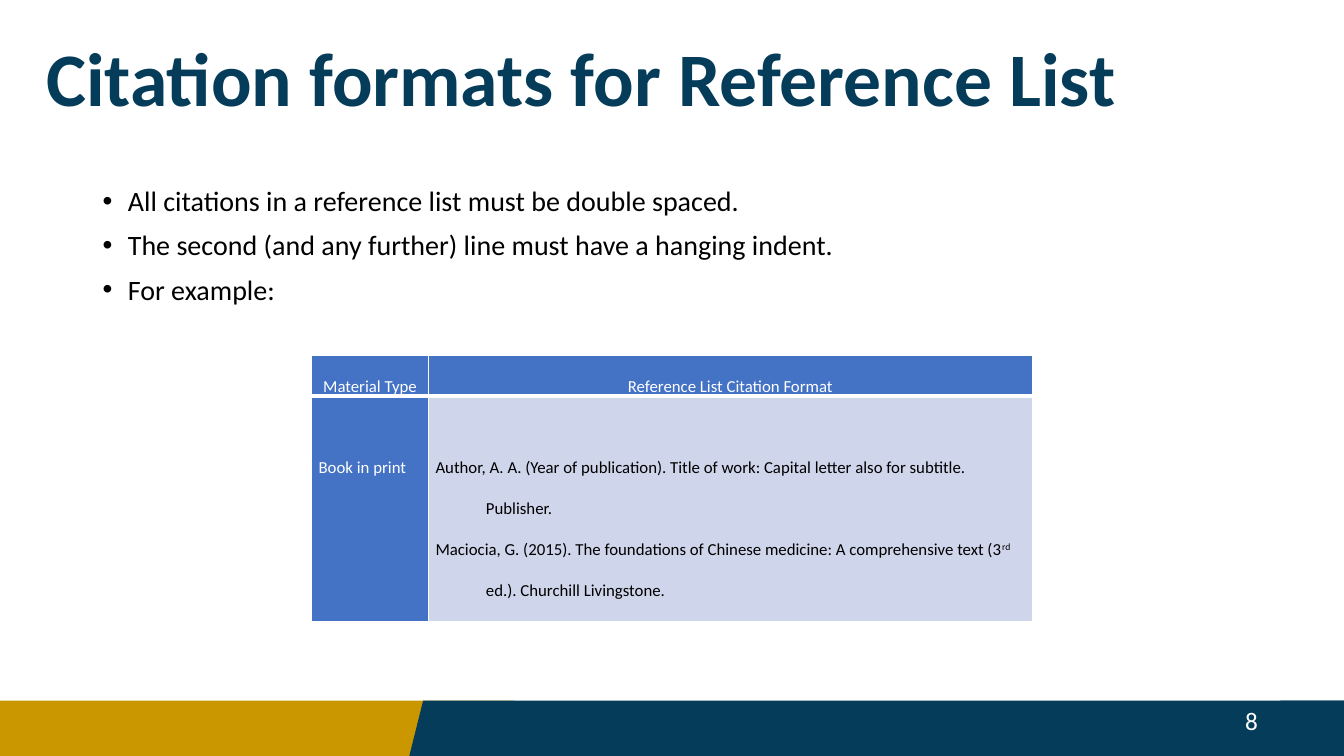
from lxml.etree import SubElement
from pptx import Presentation
from pptx.dml.color import RGBColor
from pptx.enum.shapes import MSO_SHAPE
from pptx.enum.text import MSO_ANCHOR, PP_ALIGN
from pptx.oxml.ns import qn
from pptx.util import Inches, Pt

NAVY = RGBColor(0x04, 0x3C, 0x59)
GOLD = RGBColor(0xCB, 0x97, 0x00)
BLUE = RGBColor(0x44, 0x72, 0xC4)
PALE = RGBColor(0xCF, 0xD5, 0xEA)
WHITE = RGBColor(0xFF, 0xFF, 0xFF)
BLACK = RGBColor(0x00, 0x00, 0x00)

BULLETS = [
    "All citations in a reference list must be double spaced.",
    "The second (and any further) line must have a hanging indent.",
    "For example:",
]
HEADINGS = ["Material Type", "Reference List Citation Format"]
MATERIAL = ["Book in print"]
CITATIONS = [
    "Author, A. A. (Year of publication). Title of work: Capital letter also for subtitle. Publisher.",
    ["Maciocia, G. (2015). The foundations of Chinese medicine: A comprehensive text (3",
     ("rd", "30000"), " ed.). Churchill Livingstone."],
]


def write(frame, paragraphs, size=12, color=BLACK, bold=False, align=PP_ALIGN.LEFT,
          spacing=1.0, before=0, hanging=0, bullet=None):
    """Fill a text frame with paragraphs; a (text, baseline) pair is a raised span."""
    for index, content in enumerate(paragraphs):
        para = frame.add_paragraph() if index else frame.paragraphs[0]
        para.alignment = align
        para.line_spacing = spacing
        para.space_before = Pt(before if index else 0)
        properties = para._p.get_or_add_pPr()
        if hanging:
            properties.set("marL", str(Inches(hanging)))
            properties.set("indent", str(-Inches(hanging)))
        if bullet:
            SubElement(properties, qn("a:buFont"), typeface="Arial")
            SubElement(properties, qn("a:buChar"), char=bullet)
        for part in [content] if isinstance(content, str) else content:
            text, baseline = (part, None) if isinstance(part, str) else part
            span = para.add_run()
            span.text = text
            span.font.name = "Calibri"
            span.font.size = Pt(size)
            span.font.bold = bold
            span.font.color.rgb = color
            if baseline:
                span._r.get_or_add_rPr().set("baseline", baseline)


class SlideBuilder:
    """Hold the style and the current page."""

    def __init__(self, page):
        """Keep the page to draw on."""
        self.page = page

    def shape(self, kind, left, top, width, height, fill):
        """Add a flat shape without outline."""
        shape = self.page.shapes.add_shape(
            kind, Inches(left), Inches(top), Inches(width), Inches(height))
        shape.shadow.inherit = False
        shape.fill.solid()
        shape.fill.fore_color.rgb = fill
        shape.line.fill.background()

    def text(self, left, top, width, height, paragraphs, anchor=MSO_ANCHOR.TOP, **style):
        """Add a wrapping text box."""
        box = self.page.shapes.add_textbox(
            Inches(left), Inches(top), Inches(width), Inches(height))
        box.text_frame.word_wrap = True
        box.text_frame.vertical_anchor = anchor
        write(box.text_frame, paragraphs, **style)

    def table(self, left, top, widths, heights):
        """Add an unbanded table with given column widths and row heights."""
        table = self.page.shapes.add_table(
            len(heights), len(widths), Inches(left), Inches(top),
            Inches(sum(widths)), Inches(sum(heights))).table
        table.first_row = table.horz_banding = False
        for column, width in zip(table.columns, widths):
            column.width = Inches(width)
        for row, height in zip(table.rows, heights):
            row.height = Inches(height)
        return table

    def cell(self, cell, paragraphs, fill, anchor=MSO_ANCHOR.TOP, top=0, bottom_line=1, **style):
        """Fill one cell and rule its edges in white."""
        cell.margin_left = cell.margin_right = Inches(0.07)
        cell.margin_top, cell.margin_bottom = Inches(top), 0
        cell.vertical_anchor = anchor
        properties = cell._tc.get_or_add_tcPr()
        for edge in ("lnL", "lnR", "lnT", "lnB"):
            weight = bottom_line if edge == "lnB" else 1
            line = SubElement(properties, qn(f"a:{edge}"), w=str(Pt(weight)))
            SubElement(SubElement(line, qn("a:solidFill")), qn("a:srgbClr"), val=str(WHITE))
        cell.fill.solid()
        cell.fill.fore_color.rgb = fill
        write(cell.text_frame, paragraphs, spacing=2.0, **style)


def main():
    """Build the citation slide."""
    deck = Presentation()
    deck.slide_width, deck.slide_height = Inches(13.33), Inches(7.5)
    builder = SlideBuilder(deck.slides.add_slide(deck.slide_layouts[6]))

    builder.shape(MSO_SHAPE.RECTANGLE, 0, 6.95, 5.1, 0.55, GOLD)
    builder.shape(MSO_SHAPE.PARALLELOGRAM, 4.06, 6.95, 9.27, 0.55, NAVY)
    builder.shape(MSO_SHAPE.RECTANGLE, 12.7, 6.95, 0.63, 0.55, NAVY)
    builder.text(12.25, 6.95, 1.08, 0.4, ["8"], anchor=MSO_ANCHOR.MIDDLE, size=18, color=WHITE)
    builder.text(0.36, 0.36, 12.07, 1.45, ["Citation formats for Reference List"],
                 size=54, color=NAVY, bold=True, spacing=0.9)
    builder.text(0.92, 1.81, 11.5, 4.76, BULLETS, size=20, spacing=0.9, before=10,
                 hanging=0.25, bullet="•")

    table = builder.table(3.09, 3.53, [1.16, 5.99], [0.4, 2.24])
    for column, heading in enumerate(HEADINGS):
        builder.cell(table.cell(0, column), [heading], BLUE, anchor=MSO_ANCHOR.MIDDLE,
                     bottom_line=3, color=WHITE, align=PP_ALIGN.CENTER, hanging=0.5 * column)
    builder.cell(table.cell(1, 0), MATERIAL, BLUE, top=0.41, color=WHITE)
    builder.cell(table.cell(1, 1), CITATIONS, PALE, top=0.41, hanging=0.5)

    deck.save("out.pptx")


if __name__ == "__main__":
    main()
